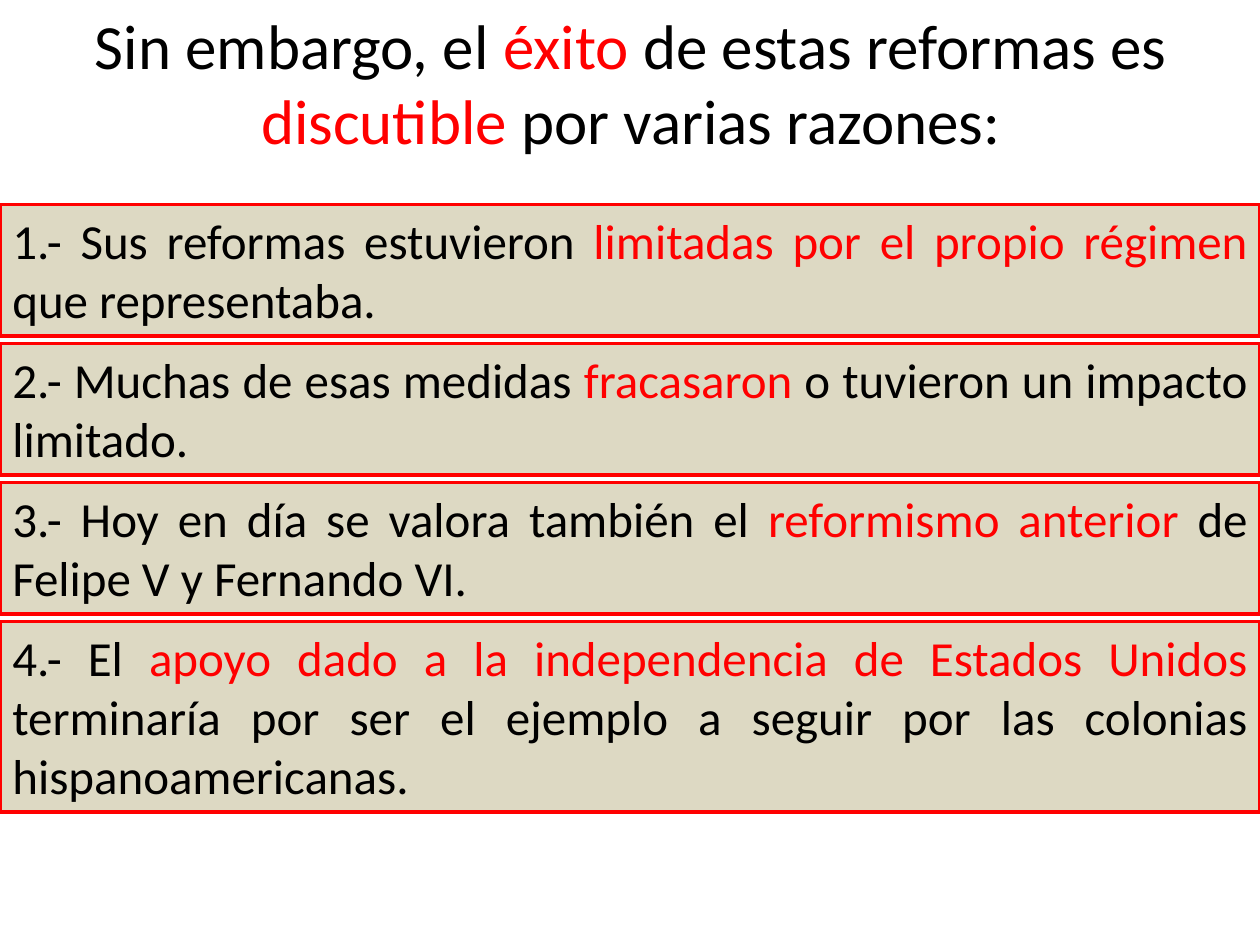
from dataclasses import dataclass

from pptx import Presentation
from pptx.dml.color import RGBColor
from pptx.enum.shapes import MSO_SHAPE
from pptx.enum.text import MSO_ANCHOR, MSO_AUTO_SIZE, PP_ALIGN
from pptx.shapes.autoshape import Shape
from pptx.slide import Slide
from pptx.util import Pt

RECTANGLE = MSO_SHAPE.RECTANGLE
TOP = MSO_ANCHOR.TOP
FIT_SHAPE = MSO_AUTO_SIZE.SHAPE_TO_FIT_TEXT
CENTER = PP_ALIGN.CENTER
JUSTIFY = PP_ALIGN.JUSTIFY

COLORS = {"text": "000000", "accent": "FF0000", "panel": "DDD9C3"}
FONT = "Calibri"
SLIDE_WIDTH = 720
SLIDE_HEIGHT = 540
TITLE_HEIGHT = 94.5
FIRST_REASON_TOP = 116.9
REASON_GAP = 4.3
TWO_LINES = 75.1
THREE_LINES = 108.9


@dataclass(frozen=True)
class Phrase:
    before: str
    accent: str
    after: str


@dataclass(frozen=True)
class Reason:
    phrase: Phrase
    height: float


TITLE = [
    Phrase("Sin embargo, el ", "éxito", " de estas reformas es "),
    Phrase("", "discutible", " por varias razones:"),
]
REASONS = [
    Reason(Phrase("1.- Sus reformas estuvieron ",
                  "limitadas por el propio régimen ",
                  "que representaba."), TWO_LINES),
    Reason(Phrase("2.- Muchas de esas medidas ", "fracasaron",
                  " o tuvieron un impacto limitado."), TWO_LINES),
    Reason(Phrase("3.- Hoy en día se valora también el ",
                  "reformismo anterior ",
                  "de Felipe V y Fernando VI."), TWO_LINES),
    Reason(Phrase("4.- El ",
                  "apoyo dado a la independencia de Estados Unidos ",
                  "terminaría por ser el ejemplo a seguir por las colonias "
                  "hispanoamericanas."), THREE_LINES),
]


def color(name: str) -> RGBColor:
    return RGBColor.from_string(COLORS[name])


def write_phrases(shape: Shape, phrases: list[Phrase], size: float,
                  alignment: PP_ALIGN) -> None:
    text_frame = shape.text_frame
    text_frame.word_wrap = True
    text_frame.auto_size = FIT_SHAPE
    text_frame.vertical_anchor = TOP
    paragraph = text_frame.paragraphs[0]
    paragraph.alignment = alignment
    for phrase in phrases:
        for text, color_name in ((phrase.before, "text"),
                                 (phrase.accent, "accent"),
                                 (phrase.after, "text")):
            if text:
                run = paragraph.add_run()
                run.text = text
                run.font.name = FONT
                run.font.size = Pt(size)
                run.font.color.rgb = color(color_name)


def draw_title(slide: Slide) -> None:
    title = slide.shapes.add_textbox(
        Pt(0.5), Pt(0), Pt(SLIDE_WIDTH), Pt(TITLE_HEIGHT))
    write_phrases(title, TITLE, 36, CENTER)


def draw_reason(slide: Slide, reason: Reason, top: float) -> None:
    panel = slide.shapes.add_shape(
        RECTANGLE, Pt(0), Pt(top), Pt(SLIDE_WIDTH), Pt(reason.height))
    panel.shadow.inherit = False
    panel.fill.solid()
    panel.fill.fore_color.rgb = color("panel")
    panel.line.color.rgb = color("accent")
    panel.line.width = Pt(2)
    write_phrases(panel, [reason.phrase], 28, JUSTIFY)


def main() -> None:
    presentation = Presentation()
    presentation.slide_width = Pt(SLIDE_WIDTH)
    presentation.slide_height = Pt(SLIDE_HEIGHT)
    slide = presentation.slides.add_slide(presentation.slide_layouts[6])
    draw_title(slide)
    top = FIRST_REASON_TOP
    for reason in REASONS:
        draw_reason(slide, reason, top)
        top += reason.height + REASON_GAP
    presentation.save("out.pptx")


if __name__ == "__main__":
    main()
